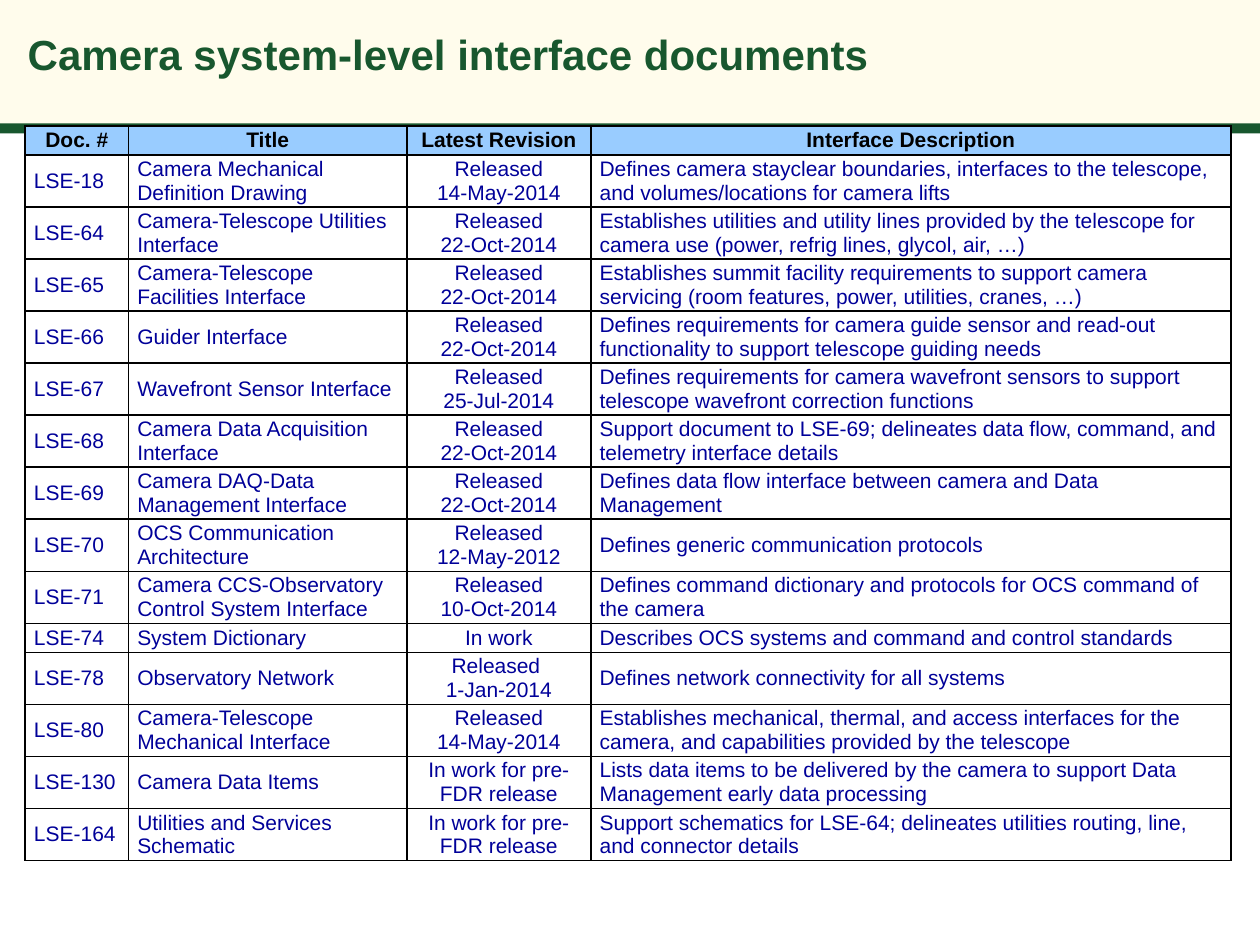
from dataclasses import dataclass
from typing import NamedTuple

from lxml.etree import SubElement
from pptx import Presentation
from pptx.dml.color import RGBColor as Rgb
from pptx.enum.shapes import MSO_SHAPE as Shape
from pptx.enum.text import MSO_ANCHOR as Anchor, PP_ALIGN as Align
from pptx.oxml.ns import qn
from pptx.util import Inches, Pt


@dataclass(frozen=True)
class Theme:
    font: str = "Arial"
    cream: str = "FFFCEC"
    green: str = "18572E"
    sky: str = "99CCFF"
    navy: str = "000099"
    black: str = "000000"
    white: str = "FFFFFF"
    title: int = 24
    body: int = 12
    rule: int = 1


class Box(NamedTuple):
    col: float
    row: float
    wide: float
    high: float


class Band(NamedTuple):
    box: Box
    fill: str


class Doc(NamedTuple):
    code: str
    name: str
    state: str
    scope: str


class Look(NamedTuple):
    fill: str
    ink: str
    bold: bool
    pad: float
    aligns: tuple


THEME = Theme()
WIDE, HIGH = Inches(10), Inches(7.5)
COLS, ROWS = 100, 75
BANDS = (
    Band(Box(0, 0, COLS, 10.2), THEME.cream),
    Band(Box(0, 9.8, COLS, 0.8), THEME.green),
)
TITLE = Box(1.7, 0.4, 78.3, 8)
TABLE = Box(2, 10, 95.7, 62)
SPANS = (8.2, 22.1, 14.6, 50.8)
LINE = 2.3
HEAD = Look(THEME.sky, THEME.black, True, 1, (Align.CENTER,) * 4)
BODY = Look(THEME.white, THEME.navy, False, 0.7,
            (Align.LEFT, Align.LEFT, Align.CENTER, Align.LEFT))
DOCS = (
    Doc("Doc. #", "Title", "Latest Revision", "Interface Description"),
    Doc("LSE-18", "Camera Mechanical Definition Drawing", "Released\v14-May-2014",
        "Defines camera stayclear boundaries, interfaces to the telescope, "
        "and volumes/locations for camera lifts"),
    Doc("LSE-64", "Camera-Telescope Utilities Interface", "Released\v22-Oct-2014",
        "Establishes utilities and utility lines provided by the telescope for "
        "camera use (power, refrig lines, glycol, air, …)"),
    Doc("LSE-65", "Camera-Telescope Facilities Interface", "Released\v22-Oct-2014",
        "Establishes summit facility requirements to support camera "
        "servicing (room features, power, utilities, cranes, …)"),
    Doc("LSE-66", "Guider Interface", "Released\v22-Oct-2014",
        "Defines requirements for camera guide sensor and read-out "
        "functionality to support telescope guiding needs"),
    Doc("LSE-67", "Wavefront Sensor Interface", "Released\v25-Jul-2014",
        "Defines requirements for camera wavefront sensors to support "
        "telescope wavefront correction functions"),
    Doc("LSE-68", "Camera Data Acquisition Interface", "Released\v22-Oct-2014",
        "Support document to LSE-69; delineates data flow, command, and "
        "telemetry interface details"),
    Doc("LSE-69", "Camera DAQ-Data Management Interface", "Released\v22-Oct-2014",
        "Defines data flow interface between camera and Data Management"),
    Doc("LSE-70", "OCS Communication Architecture", "Released\n12-May-2012",
        "Defines generic communication protocols"),
    Doc("LSE-71", "Camera CCS-Observatory Control System Interface",
        "Released\v10-Oct-2014",
        "Defines command dictionary and protocols for OCS command of the camera"),
    Doc("LSE-74", "System Dictionary", "In work",
        "Describes OCS systems and command and control standards"),
    Doc("LSE-78", "Observatory Network", "Released \n1-Jan-2014",
        "Defines network connectivity for all systems"),
    Doc("LSE-80", "Camera-Telescope Mechanical Interface", "Released\v14-May-2014",
        "Establishes mechanical, thermal, and access interfaces for the "
        "camera, and capabilities provided by the telescope"),
    Doc("LSE-130", "Camera Data Items", "In work for pre-FDR release",
        "Lists data items to be delivered by the camera to support Data "
        "Management early data processing"),
    Doc("LSE-164", "Utilities and Services Schematic", "In work for pre-FDR release",
        "Support schematics for LSE-64; delineates utilities routing, line, "
        "and connector details"),
)


def across(cols: float) -> int:
    return round(WIDE * cols / COLS)


def down(rows: float) -> int:
    return round(HIGH * rows / ROWS)


def place(box: Box) -> tuple:
    return across(box.col), down(box.row), across(box.wide), down(box.high)


def style(frame, size: int, ink: str, bold: bool, align) -> None:
    for para in frame.paragraphs:
        para.alignment = align
        for run in para.runs:
            font = run.font
            font.name, font.size, font.bold = THEME.font, Pt(size), bold
            font.color.rgb = Rgb.from_string(ink)


def draw_band(slide, band: Band) -> None:
    shape = slide.shapes.add_shape(Shape.RECTANGLE, *place(band.box))
    shape.shadow.inherit = False
    shape.fill.solid()
    shape.fill.fore_color.rgb = Rgb.from_string(band.fill)
    shape.line.fill.background()
    slide.shapes.title._element.addprevious(shape._element)


def draw_title(slide, text: str) -> None:
    title = slide.shapes.title
    title.left, title.top, title.width, title.height = place(TITLE)
    frame = title.text_frame
    frame.text = text
    frame.word_wrap = True
    frame.vertical_anchor = Anchor.MIDDLE
    frame.margin_left = frame.margin_right = across(0.5)
    frame.margin_top, frame.margin_bottom = down(0.2), down(0.5)
    style(frame, THEME.title, THEME.green, True, Align.LEFT)


def edge(cell) -> None:
    props = cell._tc.get_or_add_tcPr()
    for spot, side in enumerate(("lnL", "lnR", "lnT", "lnB")):
        line = props.makeelement(qn(f"a:{side}"), {"w": str(Pt(THEME.rule))})
        fill = SubElement(line, qn("a:solidFill"))
        SubElement(fill, qn("a:srgbClr"), val=THEME.black)
        props.insert(spot, line)


def draw_cell(cell, text: str, look: Look, align) -> None:
    frame = cell.text_frame
    frame.text = text
    style(frame, THEME.body, look.ink, look.bold, align)
    for gap in cell._tc.iter(qn("a:br")):
        SubElement(gap, qn("a:rPr"), sz=str(THEME.body * 100))
    cell.vertical_anchor = Anchor.MIDDLE
    cell.margin_left = cell.margin_right = across(look.pad)
    cell.margin_top = cell.margin_bottom = down(0.2)
    cell.fill.solid()
    cell.fill.fore_color.rgb = Rgb.from_string(look.fill)
    edge(cell)


def draw_table(slide, docs: tuple) -> None:
    frame = slide.shapes.add_table(len(docs), len(SPANS), *place(TABLE))
    table = frame.table
    table.horz_banding = False
    for col, span in zip(table.columns, SPANS):
        col.width = across(span)
    for spot, (row, doc) in enumerate(zip(table.rows, docs)):
        row.height = down(LINE)
        look = BODY if spot else HEAD
        for cell, text, align in zip(row.cells, doc, look.aligns):
            draw_cell(cell, text, look, align)
    frame.height = down(TABLE.high)


def main() -> None:
    deck = Presentation()
    deck.slide_width, deck.slide_height = WIDE, HIGH
    slide = deck.slides.add_slide(deck.slide_layouts[5])
    for band in BANDS:
        draw_band(slide, band)
    draw_title(slide, "Camera system-level interface documents")
    draw_table(slide, DOCS)
    deck.save("out.pptx")


if __name__ == "__main__":
    main()
